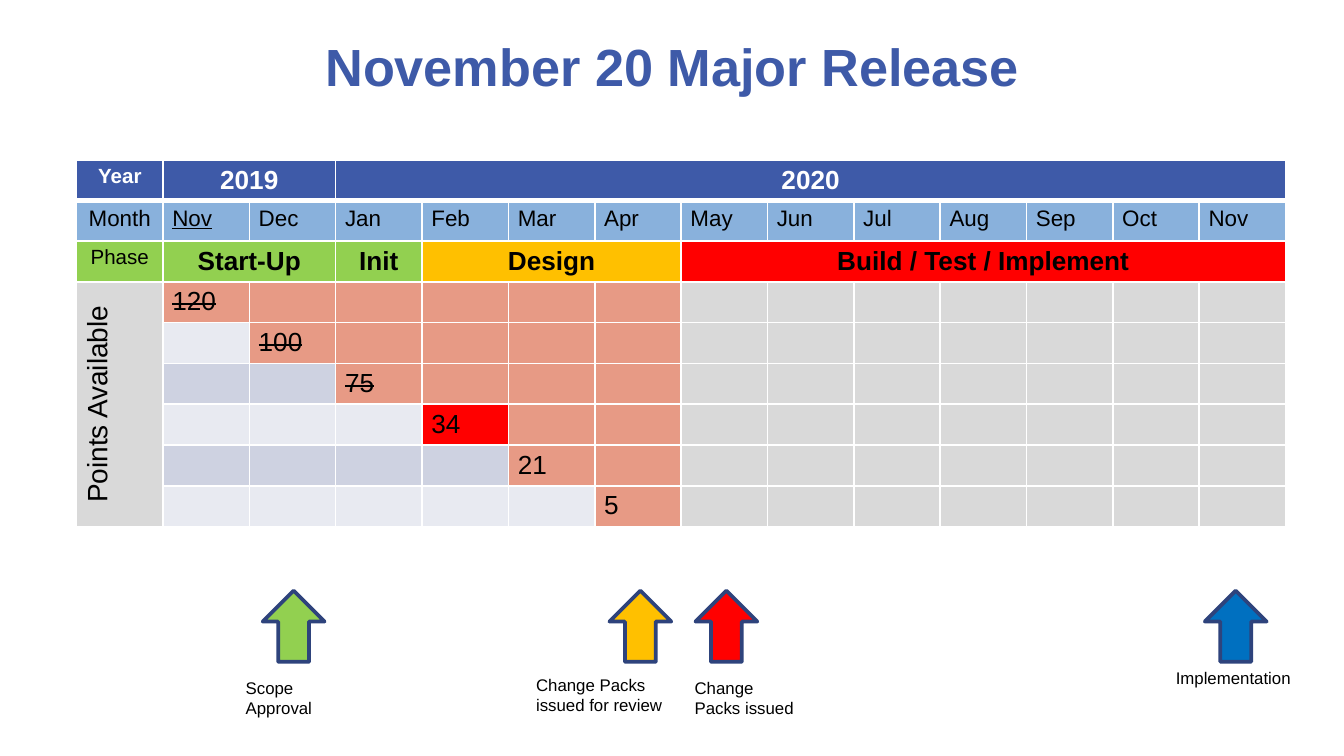
import lxml.etree
import pptx
import pptx.dml.color
import pptx.enum.shapes
import pptx.enum.text
import pptx.oxml.ns
import pptx.util

Inches, Pt = pptx.util.Inches, pptx.util.Pt
ALIGN = pptx.enum.text.PP_ALIGN
ANCHOR = pptx.enum.text.MSO_ANCHOR
qn = pptx.oxml.ns.qn

COLORS = {
    "navy": "3E5AA8", "outline": "2E437C", "month": "89B1DC", "blue": "0070C0",
    "green": "92D050", "amber": "FFC000", "red": "FF0000",
    "salmon": "E79A85", "gray": "D9D9D9", "light": "E8EAF1", "dark": "CED2E1",
    "black": "000000", "white": "FFFFFF",
}


def rgb(name):
    return pptx.dml.color.RGBColor.from_string(COLORS[name])


def write(frame, text, size, color="black", bold=False, align=ALIGN.LEFT):
    """Fill a text frame with one formatted run and return that run."""
    paragraph = frame.paragraphs[0]
    paragraph.text = text
    paragraph.alignment = align
    run = paragraph.runs[0]
    run.font.name = "Arial"
    run.font.size = Pt(size)
    run.font.bold = bold
    run.font.color.rgb = rgb(color)
    return run


deck = pptx.Presentation()
deck.slide_width = Inches(10)
deck.slide_height = deck.slide_width * 9 // 16
slide = deck.slides.add_slide(deck.slide_layouts[6])

title = slide.shapes.add_textbox(Inches(0.5), Inches(0.14), Inches(9), Inches(0.7)).text_frame
title.word_wrap = True
title.vertical_anchor = ANCHOR.MIDDLE
write(title, "November 20 Major Release", 28, "navy", True, ALIGN.CENTER)

# Release plan: first column holds labels, the others one month each
ROWS, COLS = 9, 14
FIRST_POINTS_ROW, FIRST_BUILD_COL = 3, 7
plan = slide.shapes.add_table(
    ROWS, COLS, Inches(0.57), Inches(1.19), Inches(9), Inches(0.3 * ROWS)).table

for row in range(ROWS):
    for col in range(COLS):
        # Each points row starts one month later than the row above
        start = row - FIRST_POINTS_ROW + 1
        if row == 0:
            color = "navy"
        elif row == 1:
            color = "month"
        elif row == 2:
            color = "green" if col < 4 else "amber" if col < FIRST_BUILD_COL else "red"
        elif col == 0 or col >= FIRST_BUILD_COL:
            color = "gray"
        elif col >= start:
            color = "red" if col == start == 4 else "salmon"
        else:
            color = "dark" if row % 2 else "light"
        cell = plan.cell(row, col)
        cell.fill.solid()
        cell.fill.fore_color.rgb = rgb(color)
        cell.margin_left = cell.margin_right = Inches(0.07)
        cell.margin_top, cell.margin_bottom = Inches(0.04), Inches(0.03)
        # Empty cells must not force taller rows
        cell.text_frame.paragraphs[0]._p.get_or_add_endParaRPr().set("sz", "1400")

        # White grid, thicker below the year row
        properties = cell._tc.get_or_add_tcPr()
        for place, side in enumerate(("lnL", "lnR", "lnT", "lnB")):
            thick = (row, side) in ((0, "lnB"), (1, "lnT"))
            border = lxml.etree.Element(qn(f"a:{side}"), w=str(Pt(3 if thick else 1)))
            line_fill = lxml.etree.SubElement(border, qn("a:solidFill"))
            lxml.etree.SubElement(line_fill, qn("a:srgbClr"), val=COLORS["white"])
            properties.insert(place, border)

# row, column, row span, column span, text, size, colour, bold
headings = [
    (0, 0, 1, 1, "Year", 11, "white", True),
    (0, 1, 1, 2, "2019", 14, "white", True),
    (0, 3, 1, 11, "2020", 14, "white", True),
    (1, 0, 1, 1, "Month", 12, "black", False),
    (2, 0, 1, 1, "Phase", 11, "black", False),
    (2, 1, 1, 2, "Start-Up", 14, "black", True),
    (2, 3, 1, 1, "Init", 14, "black", True),
    (2, 4, 1, 3, "Design", 14, "black", True),
    (2, 7, 1, 7, "Build / Test / Implement", 14, "black", True),
    (3, 0, 6, 1, "Points Available", 15, "black", False),
]
for row, col, height, width, text, size, color, bold in headings:
    cell = plan.cell(row, col)
    if height * width > 1:
        cell.merge(plan.cell(row + height - 1, col + width - 1))
    write(cell.text_frame, text, size, color, bold, ALIGN.CENTER)
plan.cell(FIRST_POINTS_ROW, 0)._tc.get_or_add_tcPr().set("vert", "vert270")

months = "Nov Dec Jan Feb Mar Apr May Jun Jul Aug Sep Oct Nov".split()
for col, month in enumerate(months, 1):
    run = write(plan.cell(1, col).text_frame, month, 12)
    run.font.underline = col == 1

for step, points in enumerate(["120", "100", "75", "34", "21", "5"]):
    run = write(plan.cell(FIRST_POINTS_ROW + step, step + 1).text_frame, points, 14)
    if step < 3:  # months already past
        run._r.get_or_add_rPr().set("strike", "sngStrike")

# Milestones: arrow left, colour, then label left, top, width, height, text
milestones = [
    (5.14, "red", 5.07, 4.99, 0.96, 0.4, "Change Packs issued"),
    (4.5, "amber", 3.89, 4.97, 1.19, 0.4, "Change Packs issued for review"),
    (8.93, "blue", 8.65, 4.92, 1.09, 0.25, "Implementation"),
    (1.92, "green", 1.73, 4.99, 1.03, 0.4, "Scope Approval"),
]
for arrow_left, color, left, top, width, height, text in milestones:
    arrow = slide.shapes.add_shape(
        pptx.enum.shapes.MSO_SHAPE.RIGHT_ARROW,
        Inches(arrow_left), Inches(4.43), Inches(0.53), Inches(0.46))
    arrow.rotation = 270
    arrow.shadow.inherit = False
    arrow.fill.solid()
    arrow.fill.fore_color.rgb = rgb(color)
    arrow.line.color.rgb = rgb("outline")
    arrow.line.width = Pt(2)

    label = slide.shapes.add_textbox(
        Inches(left), Inches(top), Inches(width), Inches(height)).text_frame
    label.word_wrap = True
    write(label, text, 9)

deck.save("out.pptx")
